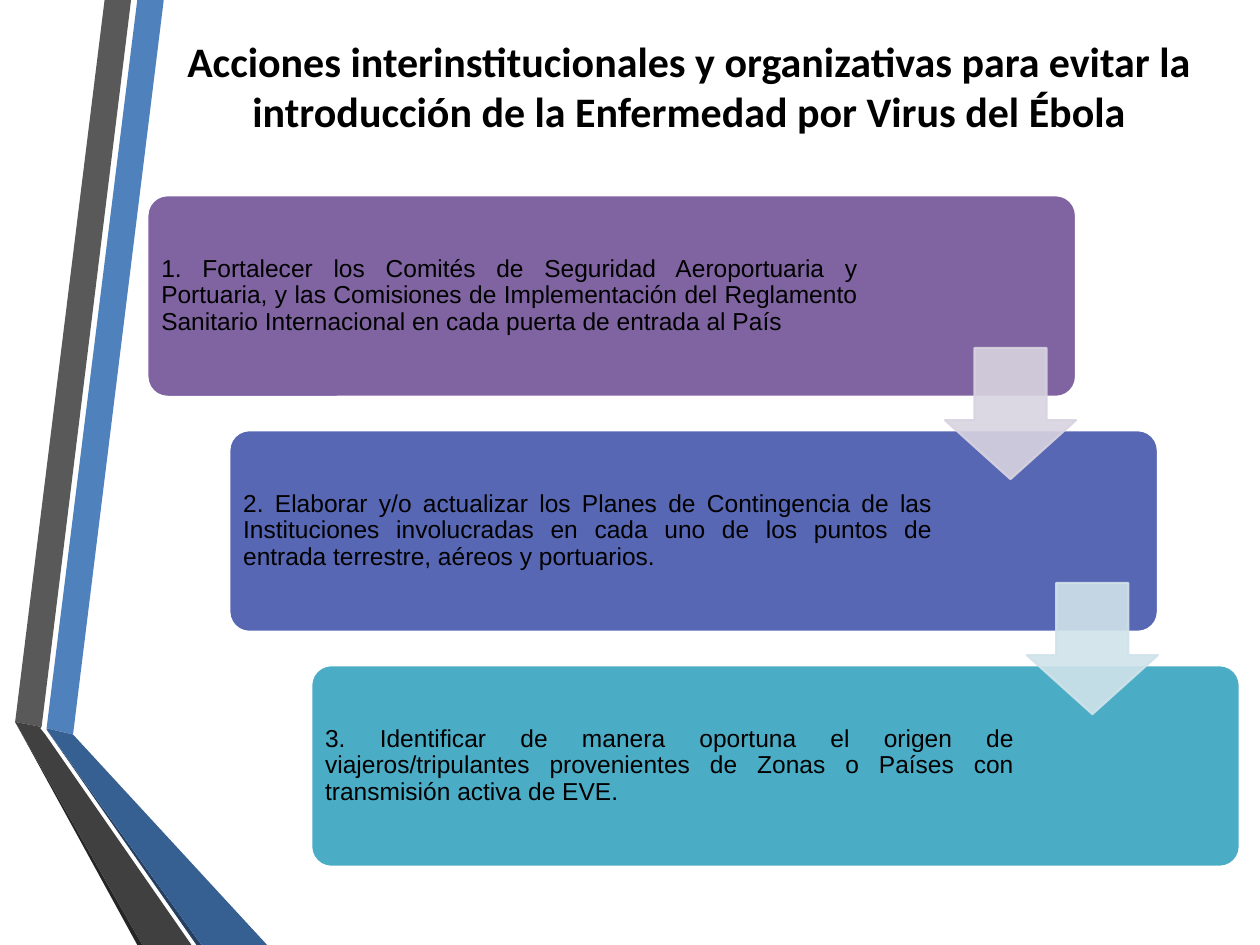
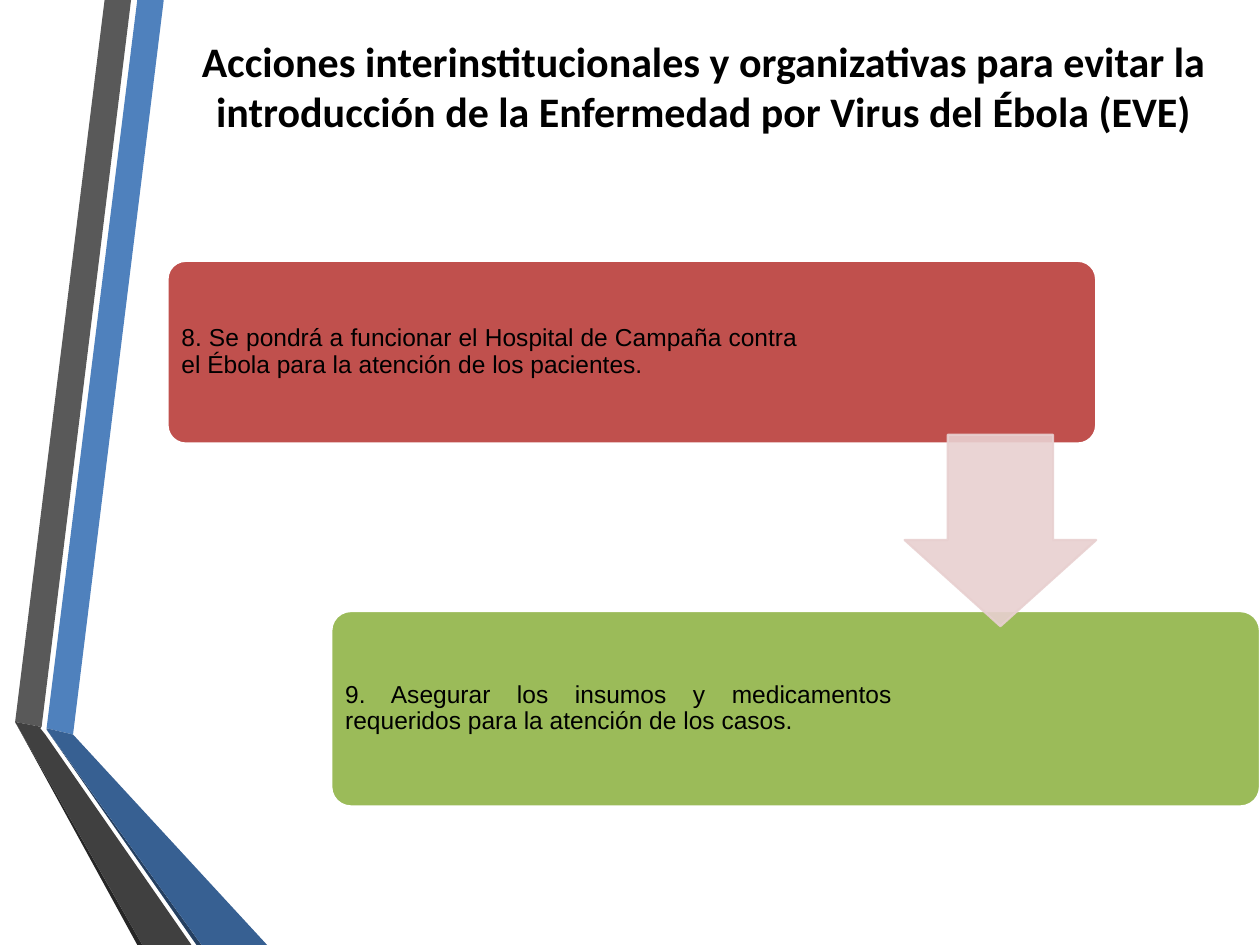
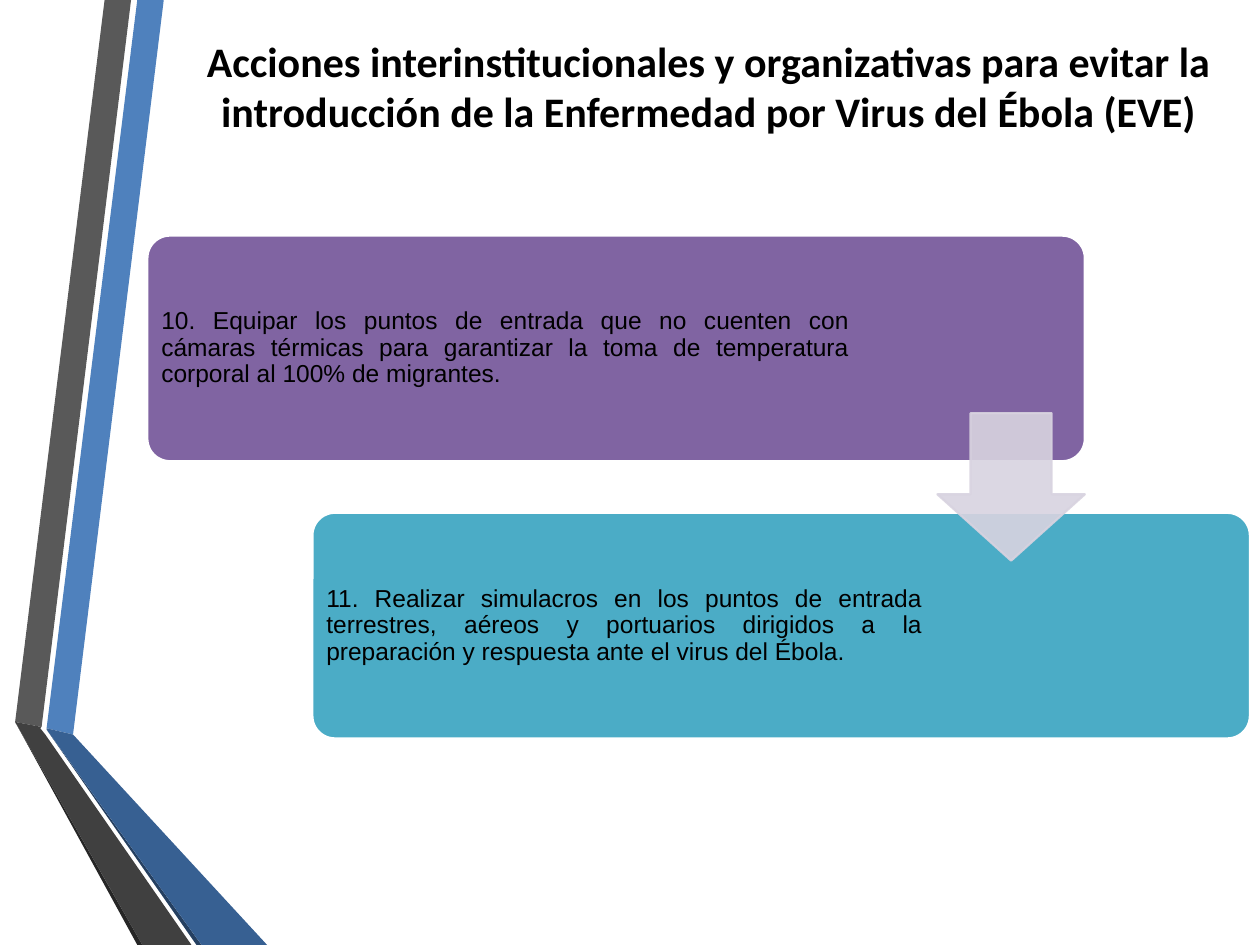
from dataclasses import dataclass

from pptx import Presentation
from pptx.dml.color import RGBColor
from pptx.enum.shapes import MSO_SHAPE
from pptx.enum.text import MSO_ANCHOR, MSO_AUTO_SIZE, PP_ALIGN
from pptx.oxml.ns import qn
from pptx.oxml.xmlchemy import OxmlElement
from pptx.util import Inches, Pt

ROUNDED = MSO_SHAPE.ROUNDED_RECTANGLE
DOWN_ARROW = MSO_SHAPE.DOWN_ARROW
TOP = MSO_ANCHOR.TOP
MIDDLE = MSO_ANCHOR.MIDDLE
CENTER = PP_ALIGN.CENTER
JUSTIFY = PP_ALIGN.JUSTIFY
NO_AUTOFIT = MSO_AUTO_SIZE.NONE

TITLE_ONLY = 5
WHITE, BLACK = "FFFFFF", "000000"
PURPLE, INDIGO, TEAL = "8064A2", "5767B4", "4BACC6"
RED, GREEN = "C0504D", "9BBB59"
PALE_PURPLE, PALE_TEAL, PALE_RED = "D8D3E0", "D0E3EA", "E8D0D0"
TITLE = ("Acciones interinstitucionales y organizativas para evitar la "
         "introducción de la Enfermedad por Virus del Ébola")

RIBBONS = [
    ("4F81BD", [(0.37, 5.78), (0.58, 5.83), (1.3, 0), (1.09, 0)]),
    ("595959", [(1.04, 0), (0.83, 0), (0.12, 5.73), (0.33, 5.77)]),
    ("262626", [(0.12, 5.73), (1.09, 7.5), (1.13, 7.5)]),
    ("254061", [(0.37, 5.79), (1.56, 7.5), (1.6, 7.5)]),
    ("376092", [(0.37, 5.79), (1.6, 7.5), (2.12, 7.5), (0.58, 5.83), (0.37, 5.78)]),
    ("404040", [(1.52, 7.5), (0.36, 5.83), (0.32, 5.78), (0.33, 5.77),
                (0.12, 5.73), (1.13, 7.5)]),
]


@dataclass
class Step:
    """One action card: its words, colour, text width and height."""
    words: str
    color: str
    text_width: float
    height: float


@dataclass
class Staircase:
    """Placement of the cards and of the arrows between them."""
    left: float
    top: float
    card_width: float
    shift: float
    drop: float
    arrow_size: float
    arrow_colors: list


def rgb(color):
    """Turn a hex string into a colour."""
    return RGBColor.from_string(color)


def paint(shape, fill, line=None, opacity=100):
    """Give a shape its fill, outline and opacity, without a shadow."""
    shape.shadow.inherit = False
    shape.fill.solid()
    shape.fill.fore_color.rgb = rgb(fill)
    if line:
        shape.line.color.rgb = rgb(line)
        shape.line.width = Pt(1.25)
    else:
        shape.line.fill.background()
    if opacity < 100:
        for color in shape.element.spPr.iter(qn("a:srgbClr")):
            alpha = OxmlElement("a:alpha")
            alpha.set("val", str(opacity * 1000))
            color.append(alpha)


def place(shape, left, top, width, height):
    """Move and size a shape in inches."""
    shape.left, shape.top = Inches(left), Inches(top)
    shape.width, shape.height = Inches(width), Inches(height)


def write(frame, words, size, font, align, anchor, bold=False):
    """Fill a text frame with one formatted paragraph."""
    frame.word_wrap = True
    frame.auto_size = NO_AUTOFIT
    frame.vertical_anchor = anchor
    para = frame.paragraphs[0]
    para.alignment = align
    span = para.add_run()
    span.text = words
    span.font.size = Pt(size)
    span.font.name = font
    span.font.bold = bold
    span.font.color.rgb = rgb(BLACK)
    return para


def add_ribbons(page, layout):
    """Draw the folded ribbons and hand them to the shared layout."""
    for color, points in RIBBONS:
        corners = [(Inches(x), Inches(y)) for x, y in points]
        builder = page.shapes.build_freeform(*corners[0])
        builder.add_line_segments(corners[1:], close=True)
        ribbon = builder.convert_to_shape()
        paint(ribbon, color)
        layout.shapes.element.append(ribbon.element)


def add_title(page, words, left, height):
    """Set the title between the given left edge and the slide edge."""
    title = page.shapes.title
    place(title, left, 0.23, 10 - left, height)
    write(title.text_frame, words, 24, "Calibri", CENTER, TOP, bold=True)


def add_card(page, step, left, top, width):
    """Draw one rounded card with its text at the left."""
    card = page.shapes.add_shape(ROUNDED, 0, 0, 0, 0)
    place(card, left, top, width, step.height)
    card.adjustments[0] = 0.1
    paint(card, step.color, WHITE)

    label = page.shapes.add_textbox(0, 0, 0, 0)
    place(label, left + 0.05, top + 0.05, step.text_width, step.height - 0.1)
    frame = label.text_frame
    frame.margin_left = frame.margin_right = Inches(0.06)
    frame.margin_top = frame.margin_bottom = Inches(0.06)
    para = write(frame, step.words, 14, "Arial", JUSTIFY, MIDDLE)
    para.line_spacing = 0.9


def add_arrow(page, right, middle, size, color):
    """Draw a translucent down arrow by its right edge and middle height."""
    arrow = page.shapes.add_shape(DOWN_ARROW, 0, 0, 0, 0)
    place(arrow, right - size, middle - size / 2, size, size)
    arrow.adjustments[0] = 0.55
    arrow.adjustments[1] = 0.45
    paint(arrow, color, color, opacity=90)


def add_staircase(page, stairs, steps):
    """Draw descending cards, then an arrow between each pair."""
    spots = [(stairs.left + i * stairs.shift, stairs.top + i * stairs.drop)
             for i in range(len(steps))]
    for step, (left, top) in zip(steps, spots):
        add_card(page, step, left, top, stairs.card_width)
    centers = [top + step.height / 2 for step, (_, top) in zip(steps, spots)]
    for i, color in enumerate(stairs.arrow_colors):
        add_arrow(page, spots[i][0] + stairs.card_width,
                  (centers[i] + centers[i + 1]) / 2, stairs.arrow_size, color)


PAGES = [
    (TITLE, 0.94, 1.31,
     Staircase(1.17, 1.55, 7.37, 0.65, 1.865, 1.04, [PALE_PURPLE, PALE_TEAL]),
     [Step("1. Fortalecer los Comités de Seguridad Aeroportuaria y Portuaria, y las "
           "Comisiones de Implementación del Reglamento Sanitario Internacional en "
           "cada puerta de entrada al País", PURPLE, 5.65, 1.6),
      Step("2. Elaborar y/o actualizar los Planes de Contingencia de las "
           "Instituciones involucradas en cada uno de los puntos de entrada "
           "terrestre, aéreos y portuarios.", INDIGO, 5.59, 1.6),
      Step("3. Identificar de manera oportuna el origen de viajeros/tripulantes "
           "provenientes de Zonas o Países con transmisión activa de EVE.",
           TEAL, 5.59, 1.6)]),
    (TITLE + " (EVE)", 1.17, 1.21,
     Staircase(1.33, 2.07, 7.37, 1.3, 2.78, 1.52, [PALE_RED]),
     [Step("8. Se pondrá a funcionar el Hospital de Campaña contra el Ébola para "
           "la atención de los pacientes.", RED, 5.01, 1.45),
      Step("9. Asegurar los insumos y medicamentos requeridos para la atención de "
           "los casos.", GREEN, 4.46, 1.55)]),
    (TITLE + " (EVE)", 1.25, 1.21,
     Staircase(1.17, 1.87, 7.44, 1.31, 2.2, 1.17, [PALE_PURPLE]),
     [Step("10. Equipar los puntos de entrada que no cuenten con cámaras térmicas "
           "para garantizar la toma de temperatura corporal al 100% de migrantes.",
           PURPLE, 5.58, 1.79),
      Step("11. Realizar simulacros en los puntos de entrada terrestres, aéreos y "
           "portuarios dirigidos a la preparación y respuesta ante el virus del "
           "Ébola.", TEAL, 4.85, 1.79)]),
]


def main():
    """Build the deck and save it."""
    deck = Presentation()
    deck.slide_width, deck.slide_height = Inches(10), Inches(7.5)
    layout = deck.slide_layouts[TITLE_ONLY]
    for number, (words, title_left, title_height, stairs, steps) in enumerate(PAGES):
        page = deck.slides.add_slide(layout)
        if number == 0:
            add_ribbons(page, layout)
        add_title(page, words, title_left, title_height)
        add_staircase(page, stairs, steps)
    deck.save("out.pptx")


if __name__ == "__main__":
    main()
